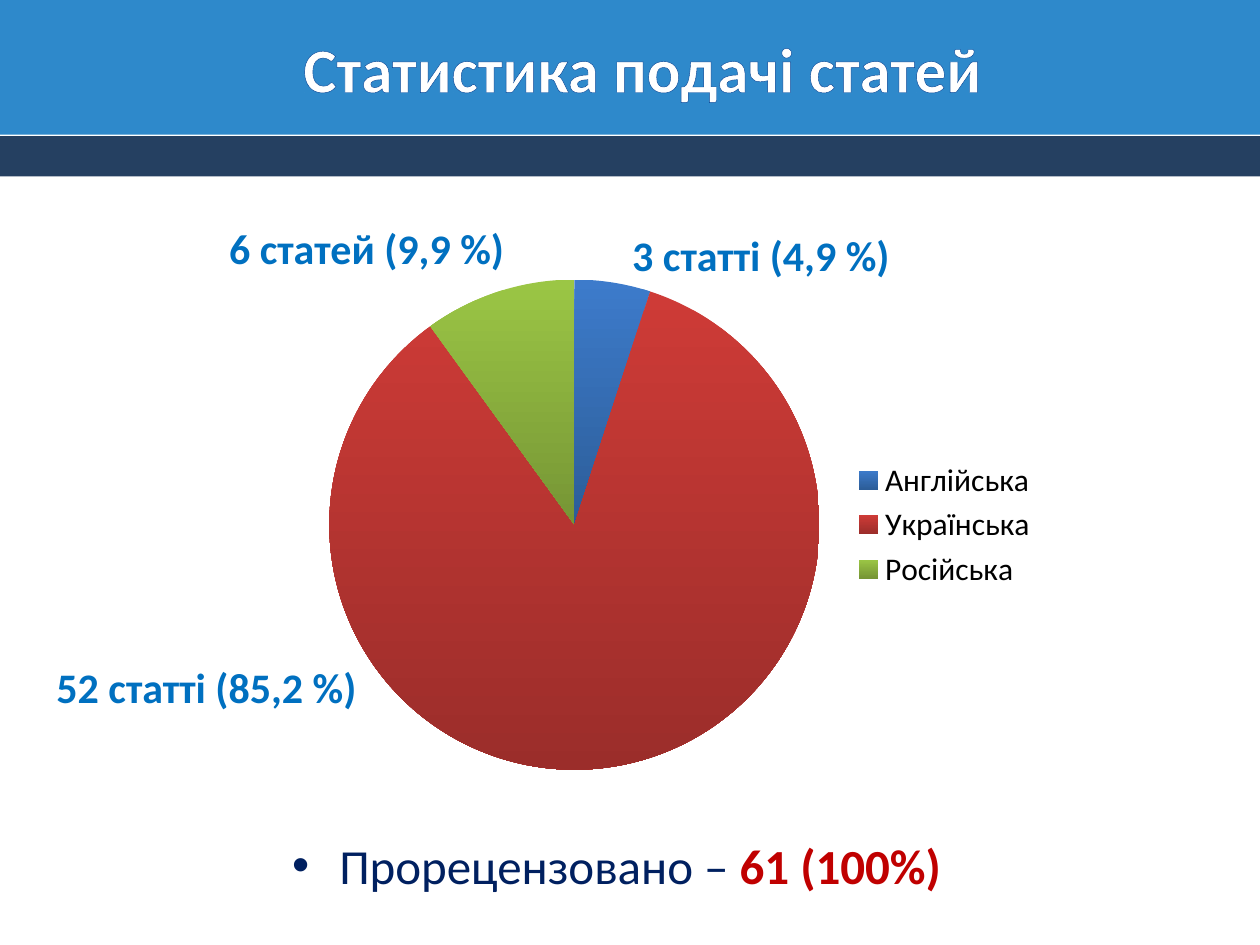
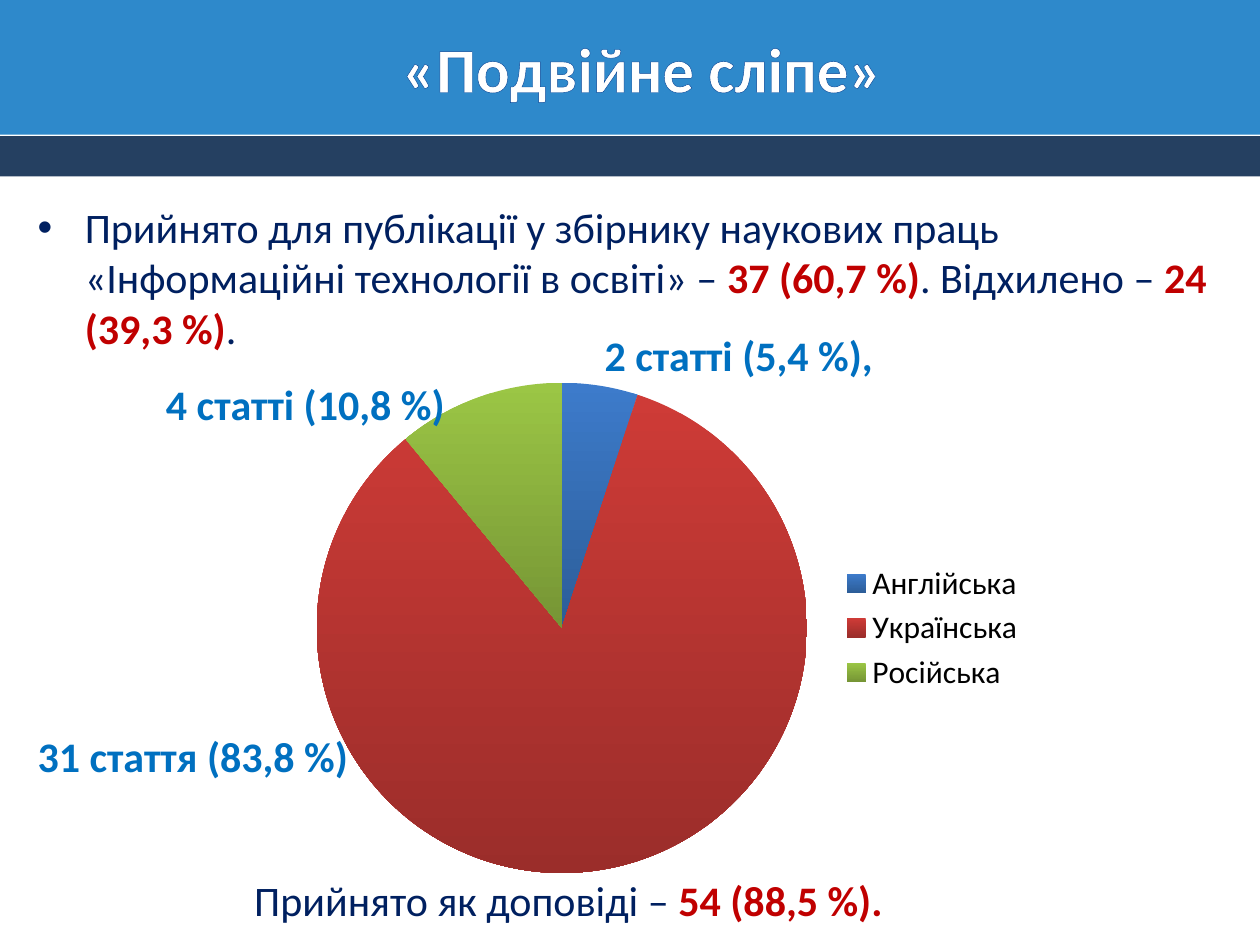
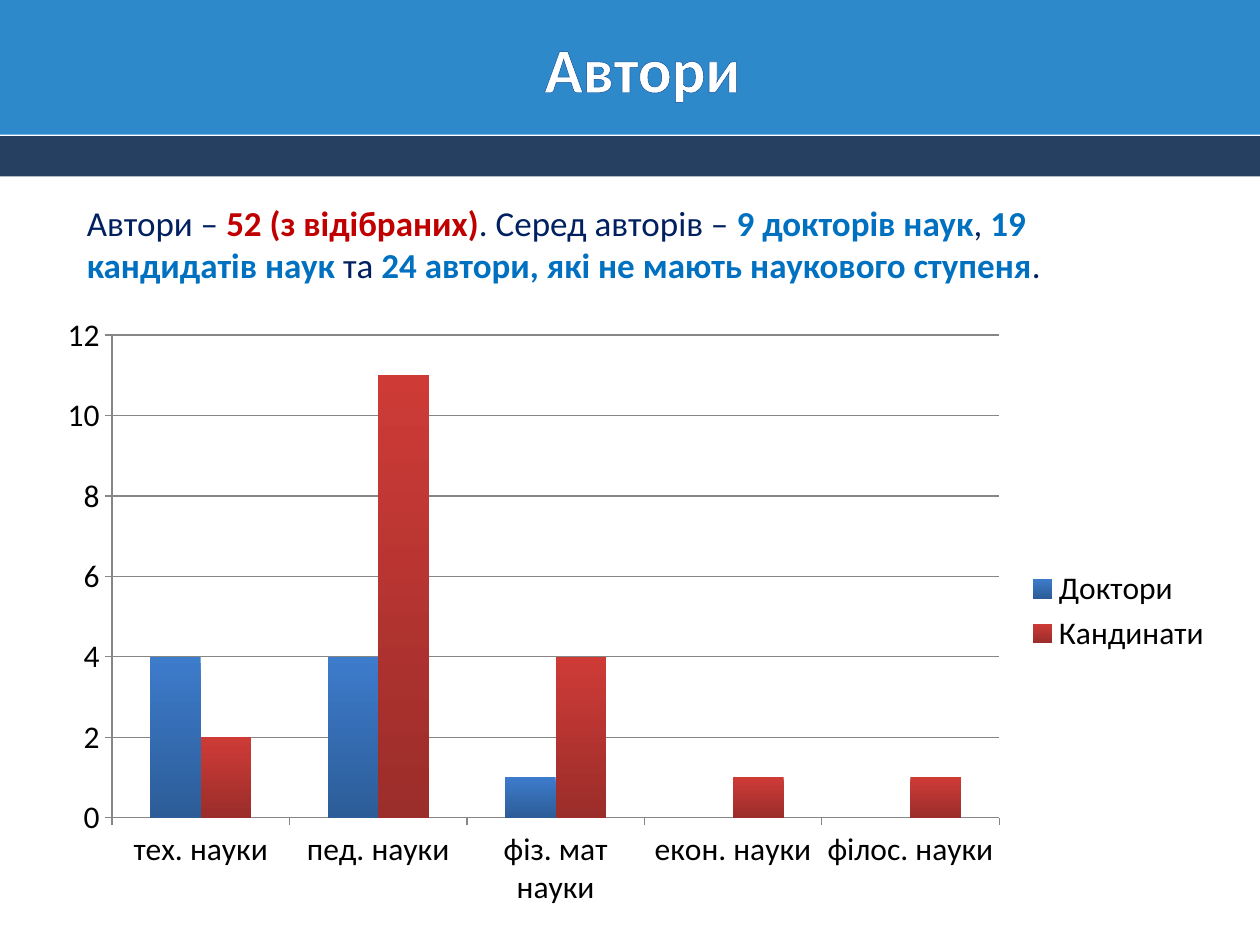
"""Builds three slides of statistics on submitted articles and their authors."""
import pptx
import pptx.chart.data
import pptx.dml.color
import pptx.enum.chart
import pptx.enum.dml
import pptx.enum.shapes
import pptx.enum.text
import pptx.oxml
import pptx.oxml.ns
import pptx.util

Pt = pptx.util.Pt
RGB = pptx.dml.color.RGBColor

FONT = "Calibri"
WHITE = RGB(0xFF, 0xFF, 0xFF)
BLACK = RGB(0, 0, 0)
NAVY = RGB(0x00, 0x20, 0x60)
RED = RGB(0xC0, 0x00, 0x00)
BLUE = RGB(0x00, 0x70, 0xC0)
STRIPE = RGB(0x25, 0x40, 0x61)
TITLE_OUTLINE = RGB(0x05, 0x46, 0x97)
GRID = RGB(0x86, 0x86, 0x86)
GRADIENTS = [
    (RGB(0x3D, 0x7B, 0xCB), RGB(0x2C, 0x5D, 0x98)),
    (RGB(0xCE, 0x3B, 0x37), RGB(0x9B, 0x2D, 0x2A)),
    (RGB(0x9B, 0xC6, 0x45), RGB(0x76, 0x95, 0x35)),
]

SLIDE_SIZE = (720, 540)
HEADER_BOX = (0, 0, 720, 77)
STRIPE_BOX = (0, 77.8, 720, 23)
TITLE_BOX = (25.2, 8.6, 684, 59.8)
HEADER_OPACITY = 82
PIE_SIZE = (429, 300)
LABEL_HEIGHT = 36
BULLET_INDENT = 27

LANGUAGES = ["Англійська", "Українська", "Російська"]

PIE_SLIDES = [
    {
        "title": "Статистика подачі статей",
        "shares": [5, 85, 10],
        "pie_corner": (171.4, 149.8),
        "bullet": ((159.8, 473.8, 396.7, 51), 28,
                   [("Прорецензовано – ", NAVY), ("61 (100%)", RED)]),
        "labels": [
            ((354.2, 127.4, 168.5), [("3 статті (4,9 %)", BLUE)]),
            ((25.2, 374.4, 196.6), [("52 статті (85,2 %)", BLUE)]),
            ((123.8, 123.8, 173.5), [("6 статей (9,9 %)", BLUE)]),
        ],
    },
    {
        "title": "«Подвійне сліпе»",
        "shares": [5, 84, 11],
        "pie_corner": (164.2, 208.8),
        "bullet": ((14.4, 111.6, 692, 96.5), 24, [
            ("Прийнято для публікації у збірнику наукових праць "
             "«Інформаційні технології в освіті» – ", NAVY),
            ("37 (60,7 %)", RED), (". Відхилено – ", NAVY),
            ("24 (39,3 %)", RED), (".", NAVY)]),
        "labels": [
            ((138.2, 496, 375), [("Прийнято як доповіді – ", NAVY), ("54 (88,5 %).", RED)]),
            ((87.8, 213, 175), [("4 статті (10,8 %)", BLUE)]),
            ((14.4, 414, 198.7), [("31 стаття (83,8 %)", BLUE)]),
            ((338.4, 185, 175), [("2 статті (5,4 %),", BLUE)]),
        ],
    },
]

AUTHORS_TITLE = "Автори"
AUTHORS_BOX = (42.5, 111.6, 617.8, 55.4)
AUTHORS_TEXT = [
    ("Автори – ", NAVY), ("52 (з відібраних)", RED), (". Серед авторів – ", NAVY),
    ("9 докторів наук", BLUE), (", ", NAVY), ("19 кандидатів наук ", BLUE),
    ("та ", NAVY), ("24 автори, які не мають наукового ступеня", BLUE), (".", NAVY),
]
DEGREES_BOX = (25.2, 173.5, 674.6, 351.4)
SCIENCES = ["тех. науки", "пед. науки", "фіз. мат науки", "екон. науки", "філос. науки"]
DEGREES = [("Доктори", [4, 4, 1, 0, 0]), ("Кандинати", [2, 11, 4, 1, 1])]


def points(box):
    return [Pt(length) for length in box]


def add_band(slide, box, color):
    band = slide.shapes.add_shape(pptx.enum.shapes.MSO_SHAPE.RECTANGLE, *points(box))
    band.shadow.inherit = False
    band.fill.solid()
    band.fill.fore_color.rgb = color
    band.line.fill.background()
    return band


def add_text(slide, box, pieces, size, wrap=True):
    """Adds a text box whose navy pieces are regular and all others bold."""
    frame = slide.shapes.add_textbox(*points(box)).text_frame
    frame.word_wrap = wrap
    paragraph = frame.paragraphs[0]
    for words, color in pieces:
        run = paragraph.add_run()
        run.text = words
        run.font.name = FONT
        run.font.size = Pt(size)
        run.font.bold = color != NAVY
        run.font.color.rgb = color
    return frame


def add_bullet(paragraph):
    properties = paragraph._p.get_or_add_pPr()
    properties.set("marL", str(Pt(BULLET_INDENT)))
    properties.set("indent", str(-Pt(BULLET_INDENT)))
    for tag, attribute, value in (("buFont", "typeface", "Arial"), ("buChar", "char", "•")):
        mark = pptx.oxml.parse_xml(f'<a:{tag} {pptx.oxml.ns.nsdecls("a")} {attribute}="{value}"/>')
        properties.append(mark)


def add_titled_slide(deck, title):
    slide = deck.slides.add_slide(deck.slide_layouts[6])
    add_band(slide, STRIPE_BOX, STRIPE)
    header = add_band(slide, HEADER_BOX, BLUE)
    header_color = header._element.spPr.find(".//" + pptx.oxml.ns.qn("a:srgbClr"))
    header_color.append(pptx.oxml.parse_xml(
        f'<a:alpha {pptx.oxml.ns.nsdecls("a")} val="{HEADER_OPACITY * 1000}"/>'))
    frame = add_text(slide, TITLE_BOX, [(title, WHITE)], 36)
    frame.vertical_anchor = pptx.enum.text.MSO_ANCHOR.MIDDLE
    heading = frame.paragraphs[0]
    heading.alignment = pptx.enum.text.PP_ALIGN.CENTER
    heading.runs[0]._r.get_or_add_rPr().insert(0, pptx.oxml.parse_xml(
        f'<a:ln {pptx.oxml.ns.nsdecls("a")} w="{Pt(1)}"><a:solidFill>'
        f'<a:srgbClr val="{TITLE_OUTLINE}"/></a:solidFill></a:ln>'))
    return slide


def paint(part, colors):
    fill = part.format.fill
    fill.gradient()
    fill.gradient_angle = 270
    for stop, color in zip(fill.gradient_stops, colors):
        stop.color.rgb = color


def add_chart(slide, kind, box, categories, series):
    data = pptx.chart.data.CategoryChartData()
    data.categories = categories
    for name, values in series:
        data.add_series(name, values)
    chart = slide.shapes.add_chart(kind, *points(box), data).chart
    chart.has_title = False
    chart.font.name = FONT
    chart.font.size = Pt(18)
    chart.font.color.rgb = BLACK
    chart.has_legend = True
    chart.legend.position = pptx.enum.chart.XL_LEGEND_POSITION.RIGHT
    chart.legend.include_in_layout = False
    return chart


def add_pie_slide(deck, content):
    slide = add_titled_slide(deck, content["title"])
    box, size, pieces = content["bullet"]
    add_bullet(add_text(slide, box, pieces, size).paragraphs[0])
    pie = add_chart(slide, pptx.enum.chart.XL_CHART_TYPE.PIE,
                    content["pie_corner"] + PIE_SIZE, LANGUAGES,
                    [("Series 1", content["shares"])])
    pie.plots[0].vary_by_categories = True
    for index, colors in enumerate(GRADIENTS):
        paint(pie.plots[0].series[0].points[index], colors)
    for place, pieces in content["labels"]:
        add_text(slide, place + (LABEL_HEIGHT,), pieces, 24, wrap=False)


def add_authors_slide(deck):
    slide = add_titled_slide(deck, AUTHORS_TITLE)
    columns = add_chart(slide, pptx.enum.chart.XL_CHART_TYPE.COLUMN_CLUSTERED,
                        DEGREES_BOX, SCIENCES, DEGREES)
    plot = columns.plots[0]
    plot.vary_by_categories = False
    plot.gap_width = 150
    plot.overlap = 0
    for degree, colors in zip(plot.series, GRADIENTS):
        paint(degree, colors)
    columns.value_axis.has_major_gridlines = True
    for part in (columns.category_axis, columns.value_axis, columns.value_axis.major_gridlines):
        part.format.line.color.rgb = GRID
        part.format.line.width = Pt(0.75)
    add_text(slide, AUTHORS_BOX, AUTHORS_TEXT, 20)


def main():
    deck = pptx.Presentation()
    deck.slide_width, deck.slide_height = points(SLIDE_SIZE)
    for content in PIE_SLIDES:
        add_pie_slide(deck, content)
    add_authors_slide(deck)
    deck.save("out.pptx")


if __name__ == "__main__":
    main()
